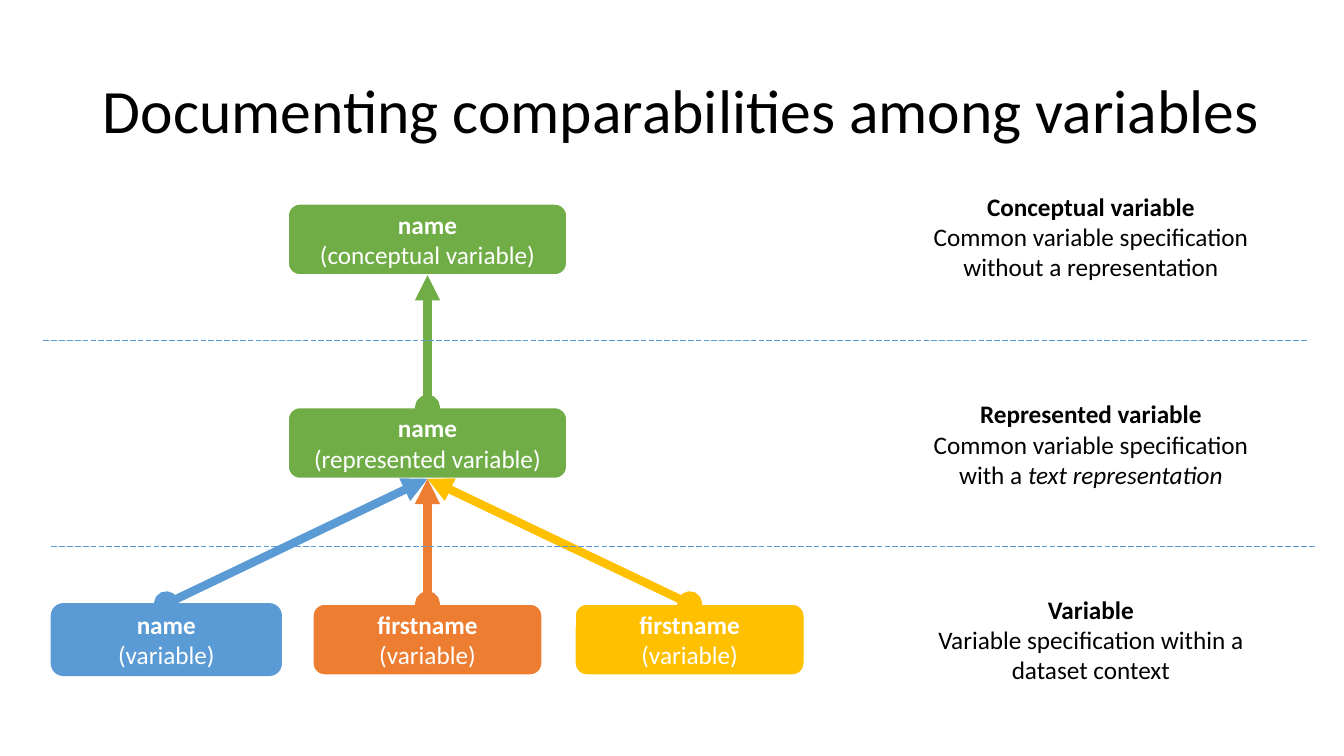
from lxml import etree
from pptx import Presentation
from pptx import util as u
from pptx.dml.color import RGBColor
from pptx.enum import dml, shapes, text
from pptx.oxml import ns

PX = 9144
FONT = "Calibri"
WHITE = RGBColor(0xFF, 0xFF, 0xFF)
BLACK = RGBColor(0x00, 0x00, 0x00)
GREEN = RGBColor(0x70, 0xAD, 0x47)
ORANGE = RGBColor(0xED, 0x7D, 0x31)
BLUE = RGBColor(0x5B, 0x9B, 0xD5)
YELLOW = RGBColor(0xFF, 0xC0, 0x00)

TITLE = "Documenting comparabilities among variables"
BOXES = {
    "conceptual": ("name", "(conceptual variable)", GREEN, WHITE, 1.5, 424, 202, 277),
    "represented": ("name", "(represented variable)", GREEN, WHITE, 1.5, 424, 404, 277),
    "blue": ("name", "(variable)", BLUE, BLUE, 1, 165, 599, 228),
    "orange": ("firstname", "(variable)", ORANGE, WHITE, 1.5, 424, 599, 228),
    "yellow": ("firstname", "(variable)", YELLOW, WHITE, 1.5, 684, 599, 228),
}
LINKS = [
    ("orange", "represented"),
    ("blue", "represented"),
    ("represented", "conceptual"),
    ("yellow", "represented"),
]
LEVELS = [
    (174, "Conceptual variable",
     [("Common variable specification without a representation", False)]),
    (380, "Represented variable",
     [("Common variable specification with a ", False), ("text representation", True)]),
    (574, "Variable",
     [("Variable specification within a dataset context", False)]),
]
DIVIDERS = [(43, 338), (51, 542)]
DIVIDER_WIDTH = 1254
BOX_HEIGHT = 71
TOP_SITE, BOTTOM_SITE = 0, 2


def px(*lengths):
    return [u.Emu(length * PX) for length in lengths]


def add_span(para, words, color, size=18, bold=False, italic=False):
    span = para.add_run()
    span.text = words
    font = span.font
    font.name, font.size, font.bold, font.italic = FONT, u.Pt(size), bold, italic
    font.color.rgb = color


def write_entry(frame, heading, spans, color):
    frame.word_wrap = True
    frame.vertical_anchor = text.MSO_ANCHOR.MIDDLE
    para = frame.paragraphs[0]
    para.alignment = text.PP_ALIGN.CENTER
    add_span(para, heading, color, bold=True)
    para = frame.add_paragraph()
    para.alignment = text.PP_ALIGN.CENTER
    for words, italic in spans:
        add_span(para, words, color, italic=italic)


def add_box(page, heading, kind, fill, outline, weight, center, top, width):
    box = page.shapes.add_shape(
        shapes.MSO_SHAPE.ROUNDED_RECTANGLE,
        *px(center - width / 2, top, width, BOX_HEIGHT))
    box.shadow.inherit = False
    box.fill.solid()
    box.fill.fore_color.rgb = fill
    box.line.color.rgb = outline
    box.line.width = u.Pt(weight)
    write_entry(box.text_frame, heading, [(kind, False)], WHITE)
    return box


def add_line(page, ends, color, weight):
    line = page.shapes.add_connector(shapes.MSO_CONNECTOR.STRAIGHT, *px(*ends))
    line.line.color.rgb = color
    line.line.width = u.Pt(weight)
    etree.SubElement(line._element.spPr, ns.qn("a:effectLst"))
    return line


def add_link(page, source, target, color):
    link = add_line(page, (0, 0, 0, 0), color, 6)
    link.begin_connect(source, TOP_SITE)
    link.end_connect(target, BOTTOM_SITE)
    outline = link.line._get_or_add_ln()
    for end, kind in (("a:headEnd", "oval"), ("a:tailEnd", "triangle")):
        etree.SubElement(outline, ns.qn(end), type=kind)


def add_title(page):
    title = page.shapes.title
    title.left, title.top, title.width, title.height = px(92, 40, 1185, 145)
    frame = title.text_frame
    frame.word_wrap = True
    frame.auto_size = text.MSO_AUTO_SIZE.NONE
    frame.vertical_anchor = text.MSO_ANCHOR.MIDDLE
    para = frame.paragraphs[0]
    para.alignment = text.PP_ALIGN.LEFT
    para.line_spacing = 0.9
    add_span(para, TITLE, BLACK, size=44)


def main():
    deck = Presentation()
    deck.slide_width, deck.slide_height = px(1333, 750)
    page = deck.slides.add_slide(deck.slide_layouts[5])
    add_title(page)

    boxes = {key: add_box(page, *details) for key, details in BOXES.items()}
    for source, target in LINKS:
        add_link(page, boxes[source], boxes[target], BOXES[source][2])

    for left, top in DIVIDERS:
        divider = add_line(page, (left, top, left + DIVIDER_WIDTH, top), BLUE, 0.5)
        divider.line.dash_style = dml.MSO_LINE.LONG_DASH

    for top, heading, spans in LEVELS:
        label = page.shapes.add_textbox(*px(909, top, 346, 121))
        write_entry(label.text_frame, heading, spans, BLACK)

    deck.save("out.pptx")


if __name__ == "__main__":
    main()
